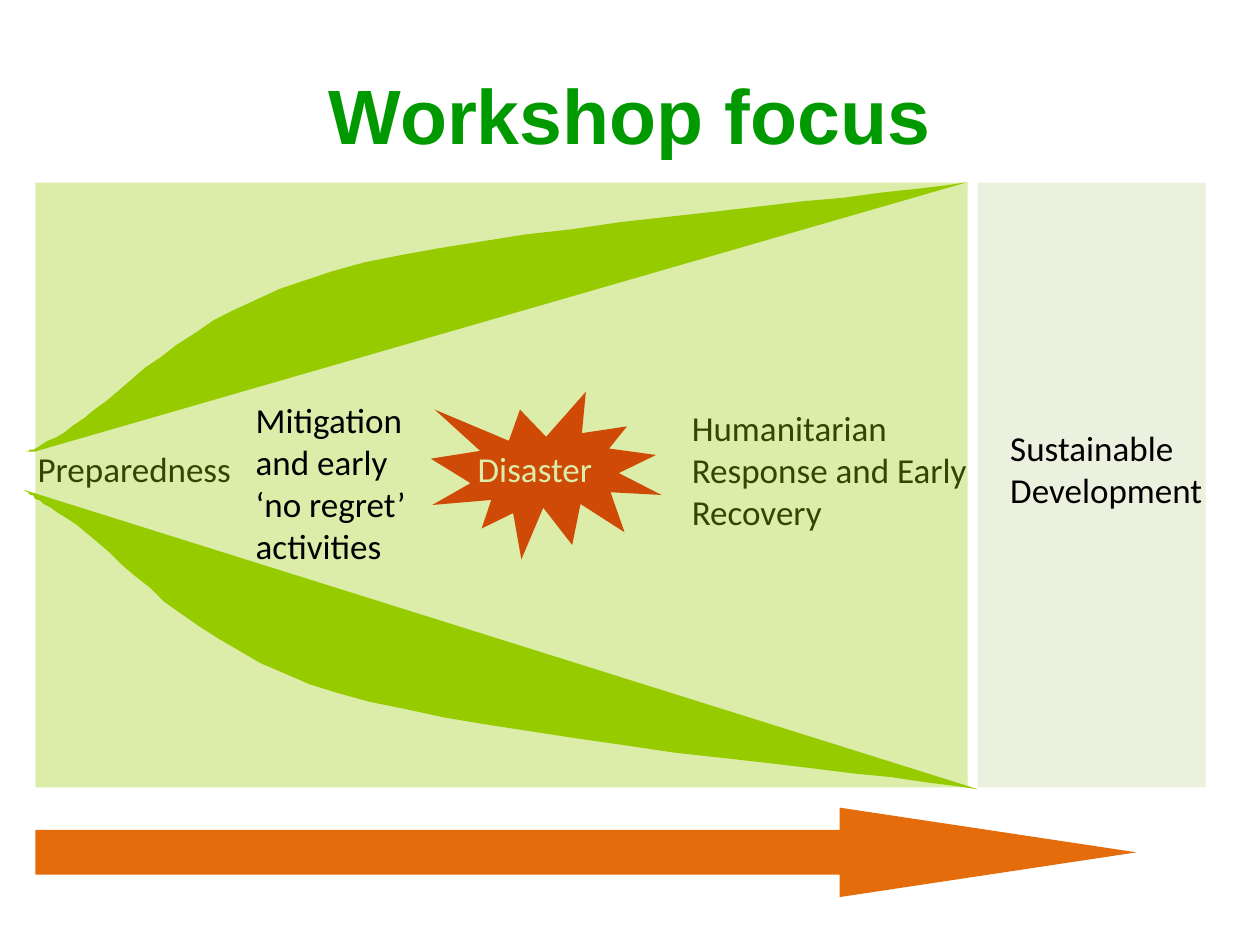
from lxml import etree
from pptx import Presentation
from pptx.dml.color import RGBColor
from pptx.enum.shapes import MSO_SHAPE
from pptx.enum.text import MSO_ANCHOR, PP_ALIGN
from pptx.oxml.ns import qn
from pptx.util import Pt

RECTANGLE, BURST, ARROW = MSO_SHAPE.RECTANGLE, MSO_SHAPE.EXPLOSION1, MSO_SHAPE.RIGHT_ARROW
LEFT, CENTER = PP_ALIGN.LEFT, PP_ALIGN.CENTER
TOP, MIDDLE = MSO_ANCHOR.TOP, MSO_ANCHOR.MIDDLE

COLORS = {
    "title": "009900",
    "text": "000000",
    "light_text": "FFFFFF",
    "development": "EBF1DE",
    "green": "96CB00",
    "disaster": "EC080A",
    "timeline": "E46C0A",
}
CURVE_STEPS = 16

# Edges of the two leaves, from the top left of the phases box:
# a start point, then cubic segments (control, control, end)
UPPER_LEAF = ((-0.7, 153.4), [
    ((0, 153.4), (-8.6, 154.8), (-5.8, 153.4)),
    ((-3.6, 151.2), (-13, 159.8), (16.6, 142.6)),
    ((45.4, 126), (84.2, 74.2), (169.9, 50.4)),
    ((256.3, 26.6), (470.9, 8.6), (532.8, 0)),
])
LOWER_LEAF = ((-5.8, 175.7), [
    ((-2.2, 178.6), (-11.5, 172.8), (18, 191.5)),
    ((47.5, 211), (86.4, 265.7), (172.8, 291.6)),
    ((259.2, 317.5), (476.6, 337), (538.6, 346.3)),
])


def paint(shape, color):
    shape.shadow.inherit = False
    shape.fill.solid()
    shape.fill.fore_color.rgb = RGBColor.from_string(COLORS[color])
    shape.line.fill.background()
    return shape


def add_block(slide, preset, box, color):
    return paint(slide.shapes.add_shape(preset, *map(Pt, box)), color)


def add_label(slide, box, text, color="text", size=20, font="Calibri",
              bold=False, align=LEFT, anchor=TOP):
    frame = slide.shapes.add_textbox(*map(Pt, box)).text_frame
    frame.word_wrap = True
    frame.vertical_anchor = anchor
    paragraph = frame.paragraphs[0]
    paragraph.alignment = align
    run = paragraph.add_run()
    run.text = text
    run.font.name, run.font.size, run.font.bold = font, Pt(size), bold
    run.font.color.rgb = RGBColor.from_string(COLORS[color])


def curve_points(start, segments):
    """Points along a chain of cubic curves."""
    points = [start]
    for control_1, control_2, end in segments:
        begin = points[-1]
        for step in range(1, CURVE_STEPS + 1):
            t = step / CURVE_STEPS
            u = 1 - t
            points.append(tuple(
                u**3 * a + 3 * u * u * t * b + 3 * u * t * t * c + t**3 * d
                for a, b, c, d in zip(begin, control_1, control_2, end)))
    return points


def add_leaf(slide, left, top, leaf):
    points = [(left + x, top + y) for x, y in curve_points(*leaf)]
    outline = slide.shapes.build_freeform(*points[0], scale=Pt(1))
    outline.add_line_segments(points[1:], close=True)
    paint(outline.convert_to_shape(), "green")


def add_title(slide, box):
    add_label(slide, box, "Workshop focus", "title", 44, "Arial", True, CENTER, MIDDLE)


def add_development(slide, box):
    left, top, width, _ = box
    add_block(slide, RECTANGLE, box, "development")
    add_label(slide, (left + 11.5, top + 136, width + 19.5, 55.5), "Sustainable Development")


def add_phases(slide, box):
    left, top, _, _ = box

    # Phases beneath the green veil
    add_label(slide, (left - 5.8, top + 147.6, 133.2, 31.7), "Preparedness")
    for leaf in (UPPER_LEAF, LOWER_LEAF):
        add_leaf(slide, left, top, leaf)
    add_block(slide, BURST, (left + 226, top + 119.5, 131.8, 95.8), "disaster")
    add_label(slide, (left + 237.6, top + 147.6, 95.8, 31), "Disaster",
              "light_text", align=CENTER)
    add_label(slide, (left + 368, top + 124.6, 198, 80),
              "Humanitarian Response and Early Recovery")

    # Translucent veil
    veil = add_block(slide, RECTANGLE, box, "green")
    color = veil.fill._xPr.find(".//" + qn("a:srgbClr"))
    etree.SubElement(color, qn("a:alpha"), val="34000")

    # Phase on top of the veil
    add_label(slide, (left + 118.8, top + 119.5, 118.8, 104.4),
              "Mitigation and early ‘no regret’ activities")


def add_timeline(slide, box):
    arrow = add_block(slide, ARROW, box, "timeline")
    arrow.adjustments[0] = 0.5
    arrow.adjustments[1] = 3.32


def main():
    deck = Presentation()
    deck.slide_width, deck.slide_height = Pt(720), Pt(540)
    slide = deck.slides.add_slide(deck.slide_layouts[6])
    add_title(slide, (25, 26, 670, 78))
    add_development(slide, (558.7, 104.4, 130.3, 345.6))
    add_phases(slide, (20.2, 104.4, 532.8, 345.6))
    add_timeline(slide, (20.2, 461.5, 629.3, 51.1))
    deck.save("out.pptx")


if __name__ == "__main__":
    main()
